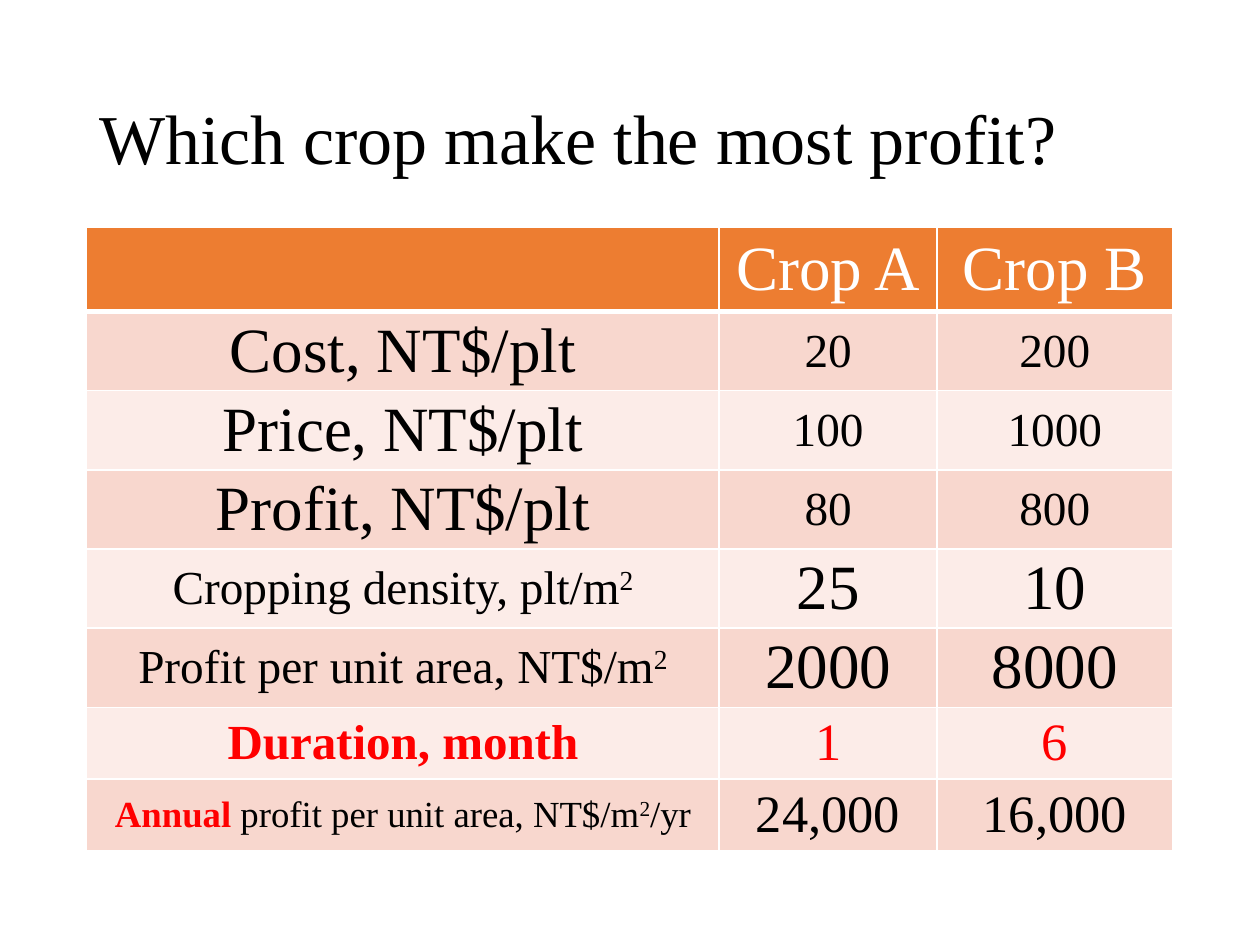
import pptx
import pptx.util
import pptx.dml.color
import pptx.enum.text
import pptx.oxml
import pptx.oxml.ns

Pt = pptx.util.Pt
RGBColor = pptx.dml.color.RGBColor
MIDDLE = pptx.enum.text.MSO_ANCHOR.MIDDLE
CENTER = pptx.enum.text.PP_ALIGN.CENTER

FONT = "Times New Roman"
BLACK = RGBColor(0x00, 0x00, 0x00)
WHITE = RGBColor(0xFF, 0xFF, 0xFF)
RED = RGBColor(0xFF, 0x00, 0x00)
ORANGE = RGBColor(0xED, 0x7D, 0x31)
BAND_DARK = RGBColor(0xF8, 0xD7, 0xCE)
BAND_LIGHT = RGBColor(0xFC, 0xEC, 0xE8)


def add_run(p, text, size, color, bold=False, superscript=False):
    r = p.add_run()
    r.text = text
    r.font.name = FONT
    r.font.size = Pt(size)
    r.font.bold = bold
    r.font.color.rgb = color
    if superscript:
        r.font._element.set("baseline", "30000")


def set_borders(cell, bottom):
    tcPr = cell._tc.get_or_add_tcPr()
    for i, (side, width) in enumerate([("L", 1), ("R", 1), ("T", 1), ("B", bottom)]):
        tcPr.insert(i, pptx.oxml.parse_xml(
            f'<a:ln{side} {pptx.oxml.ns.nsdecls("a")} w="{Pt(width)}">'
            f'<a:solidFill><a:srgbClr val="{WHITE}"/></a:solidFill></a:ln{side}>'))


prs = pptx.Presentation()
prs.slide_width, prs.slide_height = Pt(720), Pt(540)
slide = prs.slides.add_slide(prs.slide_layouts[5])

title = slide.shapes.title
title.left, title.top, title.width, title.height = Pt(49.5), Pt(28.75), Pt(621), Pt(104.5)
tf = title.text_frame
tf.word_wrap = True
tf.vertical_anchor = MIDDLE
p = tf.paragraphs[0]
p.alignment = pptx.enum.text.PP_ALIGN.LEFT
p.line_spacing = 0.9
add_run(p, "Which crop make the most profit?", 40, BLACK)

col_widths = [361.5, 124.5, 134.5]
row_heights = [48] + [38] * 3 + [41] * 4
rows = [
    ([], "Crop A", "Crop B", 36, WHITE),
    ([("Cost, NT$/plt", 36, BLACK)], "20", "200", 27, BLACK),
    ([("Price, NT$/plt", 36, BLACK)], "100", "1000", 27, BLACK),
    ([("Profit, NT$/plt", 36, BLACK)], "80", "800", 27, BLACK),
    ([("Cropping density, plt/m", 27, BLACK), ("2", 27, BLACK, False, True)],
     "25", "10", 36, BLACK),
    ([("Profit per unit area, NT$/m", 27, BLACK), ("2", 27, BLACK, False, True)],
     "2000", "8000", 36, BLACK),
    ([("Duration, month", 28, RED, True)], "1", "6", 30, RED),
    ([("Annual ", 21, RED, True), ("profit per unit area, NT$/m", 21, BLACK),
      ("2", 21, BLACK, False, True), ("/yr", 21, BLACK)],
     "24,000", "16,000", 30, BLACK),
]

table = slide.shapes.add_table(len(rows), len(col_widths), Pt(49.5), Pt(130),
                               Pt(sum(col_widths)), Pt(sum(row_heights))).table
table.first_row = False
table.horz_banding = False
for col, width in zip(table.columns, col_widths):
    col.width = Pt(width)

for i, (label, crop_a, crop_b, size, color) in enumerate(rows):
    table.rows[i].height = Pt(row_heights[i])
    fill = ORANGE if i == 0 else BAND_DARK if i % 2 else BAND_LIGHT
    for j, runs in enumerate([label, [(crop_a, size, color)], [(crop_b, size, color)]]):
        cell = table.cell(i, j)
        cell.fill.solid()
        cell.fill.fore_color.rgb = fill
        cell.vertical_anchor = MIDDLE
        cell.margin_left = cell.margin_right = Pt(5.4)
        cell.margin_top = cell.margin_bottom = Pt(2.7)
        set_borders(cell, 3 if i == 0 else 1)
        p = cell.text_frame.paragraphs[0]
        p.alignment = CENTER
        for run in runs:
            add_run(p, *run)

prs.save("out.pptx")
